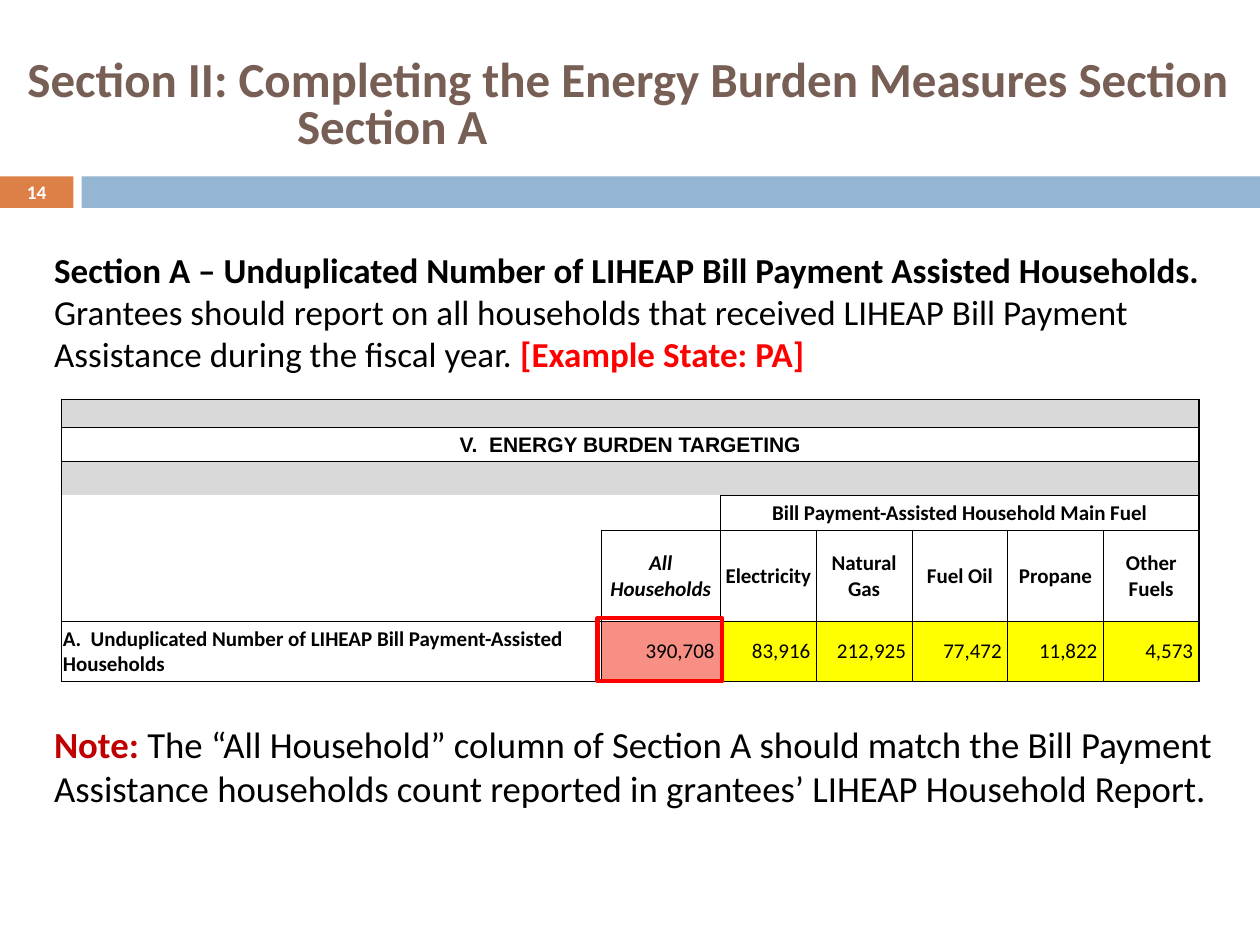
from lxml import etree
from pptx import Presentation
from pptx.dml.color import RGBColor
from pptx.enum import shapes, text
from pptx.oxml.ns import qn
from pptx.util import Pt

COLORS = {"orange": "DD8047", "blue": "94B6D2", "brown": "775F55", "white": "FFFFFF",
          "black": "000000", "red": "FF0000", "dark_red": "C00000", "gray": "D9D9D9",
          "salmon": "F88F84", "yellow": "FFFF00"}
ALIGN = {"l": text.PP_ALIGN.LEFT, "c": text.PP_ALIGN.CENTER, "r": text.PP_ALIGN.RIGHT}

# Content: runs are (text, size, colour, bold)
TITLE = [("Section II: Completing the Energy Burden Measures Section Section A",
          28, "brown", True)]
NUMBER = [("14", 11, "white", True)]
INTRO = [
    ("Section A – Unduplicated Number of LIHEAP Bill Payment Assisted Households. ",
     20, "black", True),
    ("Grantees should report on all households that received LIHEAP Bill Payment "
     "Assistance during the fiscal year. ", 20, "black", False),
    ("[Example State: PA]", 20, "red", True),
]
NOTE = [
    ("Note: ", 21, "dark_red", True),
    ("The “All Household” column of Section A should match the Bill Payment Assistance "
     "households count reported in grantees’ LIHEAP Household Report.", 21, "black", False),
]
FUELS = [("Electricity", "83,916 "), ("Natural Gas", "212,925 "), ("Fuel Oil", "77,472 "),
         ("Propane", "11,822 "), ("Other Fuels", "4,573 ")]

# Table: cells are (column, span, text, align, fill, border sides)
COL_WIDTHS = [308.2, 13.7] + [54.7] * 6
ROW_HEIGHTS = [16, 19.4, 19.4, 20, 52, 34.4]
TABLE_LEFT, TABLE_TOP = 35.2, 228.2
FIRST_FUEL, LAST_COL = 3, len(COL_WIDTHS) - 1
ROWS = [
    [(0, 2, "", "l", "gray", "LTB")]
    + [(c, 1, "", "l", "gray", "TBR" if c == LAST_COL else "TB")
       for c in range(2, LAST_COL + 1)],
    [(0, 8, "V.  ENERGY BURDEN TARGETING", "c", None, "LRTB")],
    [(0, 1, "", "l", "gray", "LT"), (1, 2, "", "l", "gray", "T")]
    + [(c, 1, "", "l", "gray", "TBR" if c == LAST_COL else "TB")
       for c in range(FIRST_FUEL, LAST_COL + 1)],
    [(0, 1, "", "l", None, "L"), (1, 2, "", "l", None, "RB"),
     (3, 5, "Bill Payment-Assisted Household Main Fuel", "c", None, "LRTB")],
    [(0, 1, "", "l", None, "LRB"), (1, 2, "All Households", "c", None, "LRTB")]
    + [(c, 1, name, "c", None, "LRTB") for c, (name, _) in enumerate(FUELS, FIRST_FUEL)],
    [(0, 1, "A.  Unduplicated Number of LIHEAP Bill Payment-Assisted Households",
      "l", None, "LRTB"),
     (1, 2, "390,708 ", "r", "salmon", "LRTB")]
    + [(c, 1, count, "r", "yellow", "LRTB")
       for c, (_, count) in enumerate(FUELS, FIRST_FUEL)],
]


def rgb(name):
    return RGBColor.from_string(COLORS[name])


def add_run(p, value, size, color, bold, font="Calibri", italic=False):
    r = p.add_run()
    r.text = value
    f = r.font
    f.name, f.size, f.bold, f.italic = font, Pt(size), bold, italic
    f.color.rgb = rgb(color)


def add_text(slide, box, runs, anchor=text.MSO_ANCHOR.TOP, align="l"):
    tf = slide.shapes.add_textbox(*map(Pt, box)).text_frame
    tf.word_wrap = True
    tf.vertical_anchor = anchor
    p = tf.paragraphs[0]
    p.alignment = ALIGN[align]
    for run in runs:
        add_run(p, *run)
    return p


def add_rect(slide, box, fill=None, line=None):
    sp = slide.shapes.add_shape(shapes.MSO_SHAPE.RECTANGLE, *map(Pt, box))
    sp.shadow.inherit = False
    if fill:
        sp.fill.solid()
        sp.fill.fore_color.rgb = rgb(fill)
    else:
        sp.fill.background()
    if line:
        sp.line.color.rgb = rgb(line)
        sp.line.width = Pt(2.5)
    else:
        sp.line.fill.background()


def set_borders(cell, sides, outer):
    tc_pr = cell._tc.get_or_add_tcPr()
    for side in "LRTB":
        width = Pt(1 if side in outer else 0.5)
        ln = etree.SubElement(tc_pr, qn("a:ln" + side), w=str(int(width)))
        if side in sides:
            fill = etree.SubElement(ln, qn("a:solidFill"))
            etree.SubElement(fill, qn("a:srgbClr"), val=COLORS["black"])
        else:
            etree.SubElement(ln, qn("a:noFill"))


def fill_cell(table, row, col, span, value, align, fill, sides):
    cell = table.cell(row, col)
    if span > 1:
        cell.merge(table.cell(row, col + span - 1))
    outer = {"L": col == 0, "R": col + span - 1 == LAST_COL,
             "T": row == 0, "B": row == len(ROWS) - 1}
    set_borders(cell, sides, [side for side, edge in outer.items() if edge])
    if fill:
        cell.fill.solid()
        cell.fill.fore_color.rgb = rgb(fill)
    else:
        cell.fill.background()
    cell.vertical_anchor = text.MSO_ANCHOR.MIDDLE
    cell.margin_left = cell.margin_right = cell.margin_top = Pt(0.7)
    cell.margin_bottom = 0
    p = cell.text_frame.paragraphs[0]
    p.alignment = ALIGN[align]
    if value:
        add_run(p, value, 12, "black", align != "r", "Arial" if row == 1 else "Calibri",
                value == "All Households")


def main():
    prs = Presentation()
    prs.slide_width, prs.slide_height = Pt(720), Pt(540)
    slide = prs.slides.add_slide(prs.slide_layouts[6])

    # Header band, title and slide number
    add_rect(slide, (0, 100.8, 42, 18), "orange")
    add_rect(slide, (46.6, 100.8, 673.4, 18), "blue")
    p = add_text(slide, (0, 22.3, 720, 77.8), TITLE, text.MSO_ANCHOR.MIDDLE)
    p.line_spacing = 0.8
    p_pr = p._p.get_or_add_pPr()
    p_pr.set("marL", str(int(Pt(162.7))))
    p_pr.set("indent", str(int(Pt(-154.1))))
    add_text(slide, (0, 100.1, 42, 19.4), NUMBER, text.MSO_ANCHOR.MIDDLE, "c")

    # Table
    size = (sum(COL_WIDTHS), sum(ROW_HEIGHTS))
    frame = slide.shapes.add_table(len(ROWS), len(COL_WIDTHS),
                                   *map(Pt, (TABLE_LEFT, TABLE_TOP, *size)))
    table = frame.table
    table.first_row = table.horz_banding = False
    for column, width in zip(table.columns, COL_WIDTHS):
        column.width = Pt(width)
    for row, height in zip(table.rows, ROW_HEIGHTS):
        row.height = Pt(height)
    for cell in table.iter_cells():  # small empty text keeps the rows low
        cell.text_frame.paragraphs[0]._p.get_or_add_endParaRPr().set("sz", "800")
    for i, cells in enumerate(ROWS):
        for spec_cell in cells:
            fill_cell(table, i, *spec_cell)

    # Explanations above and below the table
    add_text(slide, (23.8, 138.2, 678.2, 82), INTRO)
    add_text(slide, (23.8, 409, 678.2, 60), NOTE)

    # Frame around the total
    left = TABLE_LEFT + COL_WIDTHS[0] - 2
    top = TABLE_TOP + sum(ROW_HEIGHTS[:-1]) - 1.7
    add_rect(slide, (left, top, 71.3, 36), line="red")

    prs.save("out.pptx")


if __name__ == "__main__":
    main()
